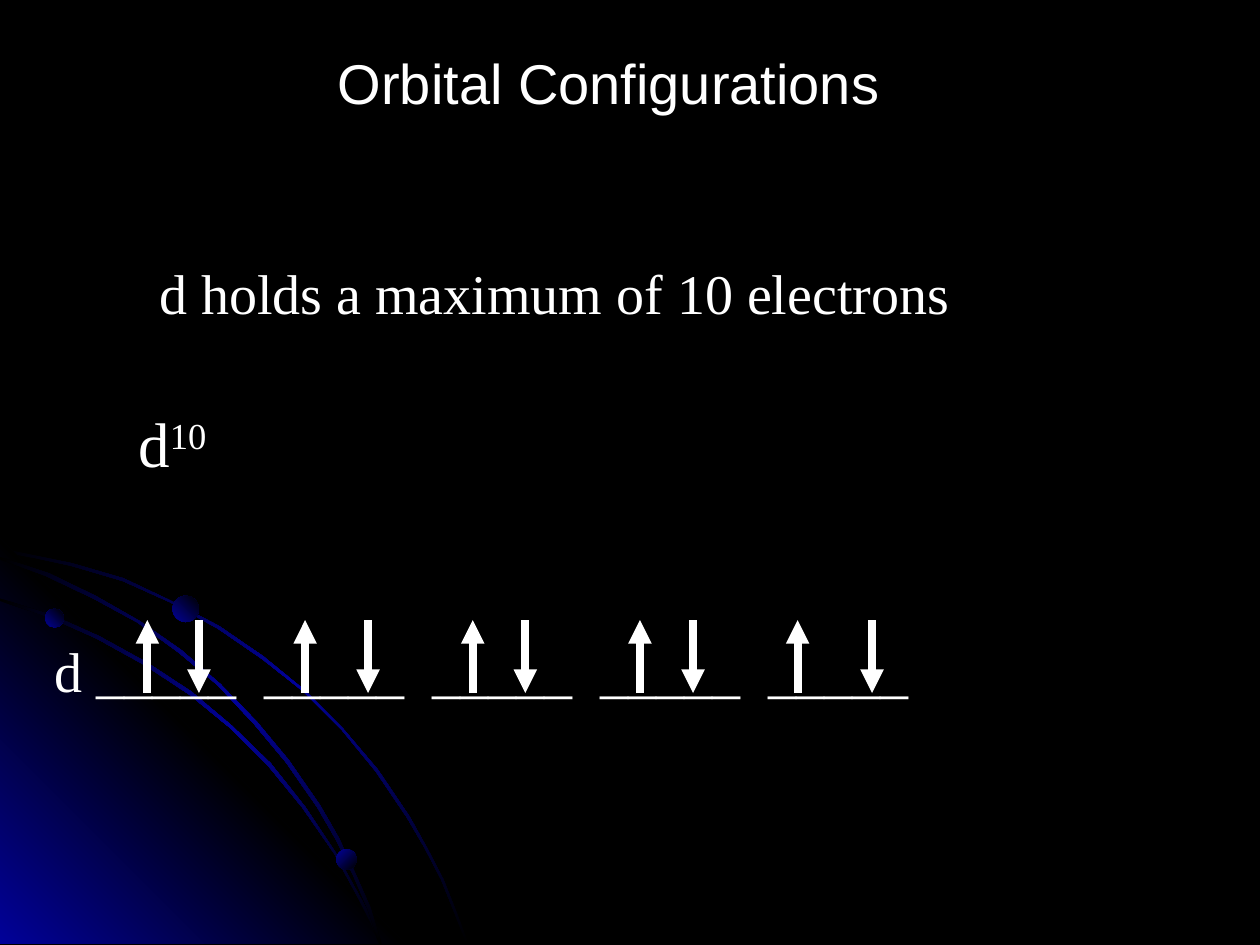
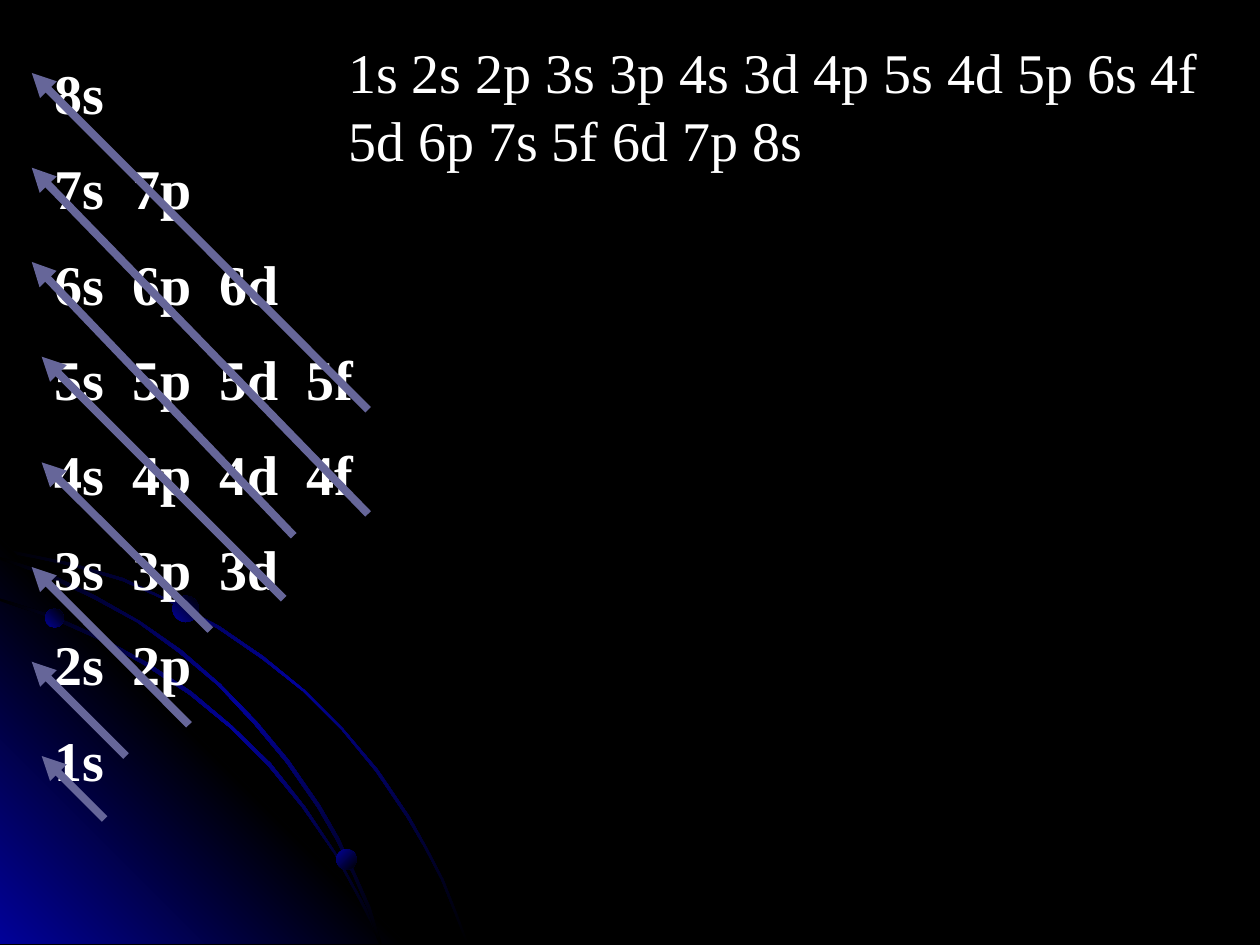
from copy import deepcopy

from lxml.etree import SubElement as Sub
from pptx import Presentation as Deck
from pptx.dml.color import RGBColor as Rgb
from pptx.enum.shapes import MSO_CONNECTOR as Link, MSO_SHAPE as Kind
from pptx.oxml.ns import qn
from pptx.util import Cm, Pt

BLACK = Rgb(0x00, 0x00, 0x00)
WHITE = Rgb(0xFF, 0xFF, 0xFF)
BLUE = Rgb(0x01, 0x01, 0x99)
SLATE = Rgb(0x66, 0x66, 0x99)
SERIF, SANS = "Times New Roman", "Arial"

UNIT = Cm(0.0254)
RISE, FALL = 45, 315
GLOW = [(0, 427), (322, 749), (0, 749)]
OUTER = [
    (57, 447), (28, 441), (0, 435), (0, 438), (28, 443), (56, 449),
    (97, 461), (135, 478), (173, 499), (208, 523), (241, 549), (271, 579),
    (298, 612), (323, 649), (337, 673), (350, 698), (360, 723), (370, 749),
    (372, 749), (362, 723), (352, 698), (339, 673), (325, 648), (300, 611),
    (272, 578), (242, 548), (209, 521), (174, 497), (136, 477), (98, 459),
]
INNER = [
    (285, 714), (294, 732), (301, 749), (303, 749), (296, 730), (286, 712),
    (266, 676), (242, 640), (215, 606), (184, 576), (152, 549), (117, 526),
    (79, 505), (41, 488), (0, 475), (0, 477), (39, 490), (77, 507),
    (115, 528), (150, 551), (183, 578), (213, 608), (240, 641), (265, 677),
]
MIDDLE = [
    (0, 442), (0, 444), (36, 457), (74, 475), (109, 494), (142, 518),
    (173, 544), (202, 575), (227, 605), (252, 641), (267, 667), (280, 694),
    (292, 722), (301, 749), (303, 749), (294, 720), (282, 693), (269, 665),
    (254, 639), (229, 603), (204, 573), (175, 543), (144, 516), (111, 493),
    (76, 473), (39, 455),
]
ORBS = [(0.91, 12.27, 0.38, RISE), (6.78, 17.12, 0.41, FALL),
        (3.48, 12.01, 0.53, RISE)]

UPS = [2.97, 6.15, 9.53, 12.9, 16.08]
DOWNS = [4.01, 7.42, 10.59, 13.97, 17.58]
HIGH, LOW = 12.5, 13.97
DIAGS = [
    (2.11, 16.51, 0.84, 15.24), (2.54, 15.24, 0.64, 13.34),
    (3.81, 14.61, 0.64, 11.43), (4.24, 12.7, 0.84, 9.32),
    (5.72, 12.07, 0.84, 7.19), (5.92, 10.8, 0.64, 5.28),
    (7.42, 10.36, 0.64, 3.38), (7.42, 8.26, 0.64, 1.47),
]


class Pen:
    """Holds the deck style and draws on the current slide."""

    def __init__(self):
        self.deck = Deck()
        self.deck.slide_width, self.deck.slide_height = Cm(25.4), Cm(19.05)

    def page(self):
        """Start a slide with the shared backdrop."""
        self.slide = self.deck.slides.add_slide(self.deck.slide_layouts[6])
        self.shapes = self.slide.shapes
        back = self.slide.background.fill
        back.solid()
        back.fore_color.rgb = BLACK
        self.sweep(OUTER, FALL, BLACK, BLUE, BLACK)
        self.sweep(GLOW, RISE, BLUE, BLACK, BLUE)
        self.sweep(INNER, FALL, BLACK, BLUE, BLACK)
        self.sweep(MIDDLE, FALL, BLACK, BLUE, BLACK)
        for left, top, size, angle in ORBS:
            self.orb(left, top, size, angle)

    def blend(self, shape, angle, *tones):
        """Fill a shape with evenly spaced gradient tones."""
        shape.shadow.inherit = False
        shape.line.fill.background()
        fill = shape.fill
        fill.gradient()
        fill.gradient_angle = angle
        stops = shape._element.xpath(".//a:gsLst")[0]
        for _ in tones[2:]:
            stops.append(deepcopy(stops[0]))
        for i, (stop, tone) in enumerate(zip(fill.gradient_stops, tones)):
            stop.color.rgb = tone
            stop.position = i / (len(tones) - 1)

    def sweep(self, points, angle, *tones):
        """Draw a closed outline with a gradient."""
        path = self.shapes.build_freeform(*points[0], scale=UNIT)
        path.add_line_segments(points[1:], close=True)
        self.blend(path.convert_to_shape(), angle, *tones)

    def orb(self, left, top, size, angle):
        """Draw a small gradient ball."""
        box = [Cm(v) for v in (left, top, size, size)]
        ball = self.shapes.add_shape(Kind.OVAL, *box)
        self.blend(ball, angle, BLUE, BLACK)

    def text(self, lines, *box, size=32, font=SERIF, bold=False,
             wrap=True, gap=16, sup=None):
        """Write lines of text, with an optional superscript at the end."""
        frame = self.shapes.add_textbox(*map(Cm, box)).text_frame
        frame.word_wrap = wrap
        frame.text = lines
        if sup:
            run = frame.paragraphs[-1].add_run()
            run.text = sup
            run._r.get_or_add_rPr().set("baseline", "30000")
        for para in frame.paragraphs:
            para.space_before = Pt(gap)
            for run in para.runs:
                style = run.font
                style.name, style.size, style.bold = font, Pt(size), bold
                style.color.rgb = WHITE

    def arrow(self, *ends, tone=WHITE):
        """Draw a thick arrow from the first point to the second."""
        link = self.shapes.add_connector(Link.STRAIGHT, *map(Cm, ends))
        link.line.color.rgb = tone
        link.line.width = Pt(4.5)
        Sub(link.line._get_or_add_ln(), qn("a:tailEnd"), type="triangle")
        Sub(link._element.spPr, qn("a:effectLst"))


def config(pen):
    """Build the slide on the d orbital."""
    pen.page()
    pen.text("d _____  _____  _____  _____  _____", 0.85, 12.7, 22.01, 1.6)
    pen.text("d holds a maximum of 10 electrons", 2.96, 5.08, 19.47, 1.6)
    for x in UPS:
        pen.arrow(x, LOW, x, HIGH)
    for x in DOWNS:
        pen.arrow(x, HIGH, x, LOW)
    pen.text("d", 2.54, 8.04, 15.66, 1.78, size=36, gap=18, sup="10")
    pen.text("Orbital Configurations", 6.56, 0.85, 11.53, 1.63,
             font=SANS, wrap=False, gap=0)


def order(pen):
    """Build the slide on the filling order."""
    pen.page()
    rows = ["  ".join(f"{n}{s}" for s in "spdf"[:min(n, 9 - n)])
            for n in range(8, 0, -1)]
    pen.text("\n".join(rows), 0.85, 1.06, 6.77, 17.37, bold=True)
    pen.text("1s 2s 2p 3s 3p 4s 3d 4p 5s 4d 5p 6s 4f 5d 6p 7s 5f 6d 7p 8s",
             6.77, 0.64, 18.63, 2.97)
    for ends in DIAGS:
        pen.arrow(*ends, tone=SLATE)


def main():
    """Build and save the deck."""
    pen = Pen()
    config(pen)
    order(pen)
    pen.deck.save("out.pptx")


if __name__ == "__main__":
    main()
